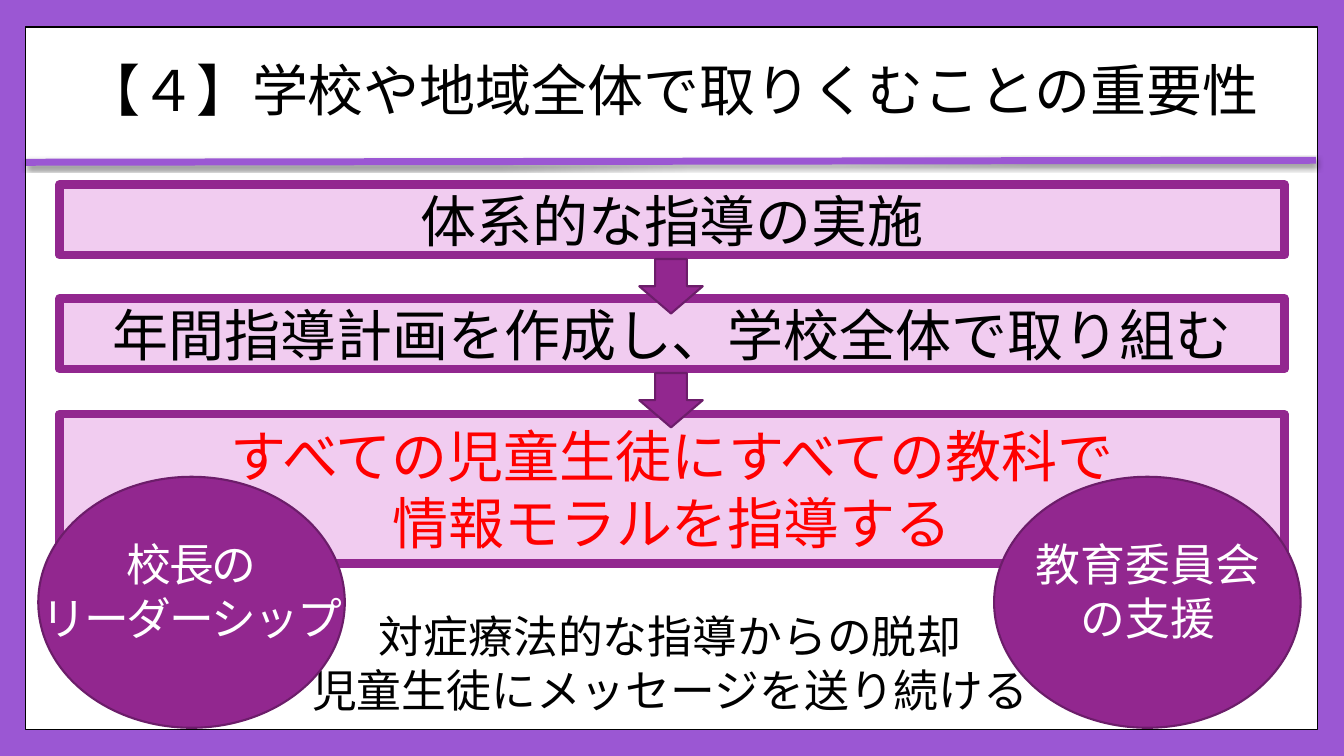
from lxml import etree
from pptx import Presentation
from pptx.dml.color import RGBColor
from pptx.enum.shapes import MSO_CONNECTOR, MSO_SHAPE
from pptx.enum.text import MSO_ANCHOR, PP_ALIGN
from pptx.oxml import parse_xml
from pptx.oxml.ns import nsdecls
from pptx.util import Inches, Pt

VIOLET = RGBColor(0x9B, 0x57, 0xD3)
PURPLE = RGBColor(0x92, 0x27, 0x8F)
DARK_PURPLE = RGBColor(0x6C, 0x1D, 0x6A)
PINK = RGBColor(0xF1, 0xCC, 0xF0)
RED = RGBColor(0xFF, 0x00, 0x00)
BLACK = RGBColor(0x00, 0x00, 0x00)
WHITE = RGBColor(0xFF, 0xFF, 0xFF)

prs = Presentation()
prs.slide_width, prs.slide_height = Inches(13.33), Inches(7.5)
s = prs.slides.add_slide(prs.slide_layouts[6])
s.background.fill.solid()
s.background.fill.fore_color.rgb = VIOLET


def add_box(kind, left, top, width, height, fill, line, weight):
    sp = s.shapes.add_shape(kind, Inches(left), Inches(top), Inches(width), Inches(height))
    sp.shadow.inherit = False
    sp.fill.solid()
    sp.fill.fore_color.rgb = fill
    sp.line.color.rgb = line
    sp.line.width = Pt(weight)
    return sp


def write_lines(sp, lines, size, color, font="Arial", wrap=True, spacing=None, tracking=None):
    """Write one centred paragraph per line; tracking is in hundredths of a point."""
    tf = sp.text_frame
    tf.word_wrap = wrap
    for i, line in enumerate(lines):
        p = tf.paragraphs[0] if i == 0 else tf.add_paragraph()
        p.alignment = PP_ALIGN.CENTER
        if spacing:
            p.line_spacing = spacing
        r = p.add_run()
        r.text = line
        r.font.name = font
        r.font.size = Pt(size)
        r.font.color.rgb = color
        if tracking:
            r.font._element.set("spc", str(tracking))
    return tf


# Frame, rule and title
add_box(MSO_SHAPE.RECTANGLE, 0.25, 0.27, 12.82, 6.97, WHITE, BLACK, 1)
rule = s.shapes.add_connector(
    MSO_CONNECTOR.STRAIGHT, Inches(0.26), Inches(1.61), Inches(13.05), Inches(1.59))
rule.line.color.rgb = VIOLET
rule.line.width = Pt(5)
rule._element.spPr.append(parse_xml(
    f'<a:effectLst {nsdecls("a")}>'
    f'<a:outerShdw blurRad="{Pt(3)}" dist="{Pt(2)}" dir="5400000" rotWithShape="0">'
    '<a:srgbClr val="000000"><a:alpha val="45000"/></a:srgbClr>'
    '</a:outerShdw></a:effectLst>'))

title = s.shapes.add_textbox(Inches(0.26), Inches(0.36), Inches(12.8), Inches(1.14))
tf = write_lines(title, ["【４】学校や地域全体で取りくむことの重要性"], 40, BLACK, "Karla", spacing=0.9)
tf.vertical_anchor = MSO_ANCHOR.MIDDLE

# Steps
steps = [
    (1.83, 0.7, BLACK, ["体系的な指導の実施"]),
    (2.96, 0.7, BLACK, ["年間指導計画を作成し、学校全体で取り組む"]),
    (4.11, 1.48, RED, ["すべての児童生徒にすべての教科で", "情報モラルを指導する"]),
]
for top, height, color, lines in steps:
    sp = add_box(MSO_SHAPE.RECTANGLE, 0.59, top, 12.15, height, PINK, PURPLE, 6)
    tf = write_lines(sp, lines, 40, color)
    tf.vertical_anchor = MSO_ANCHOR.MIDDLE

# Closing message
message = s.shapes.add_textbox(Inches(2.96), Inches(5.99), Inches(7.38), Inches(1.18))
write_lines(message, ["対症療法的な指導からの脱却", "児童生徒にメッセージを送り続ける"], 32, BLACK, wrap=False)

# Supporters
supporters = [
    (0.38, 0.3, 3.2, -150, ["校長の", "リーダーシップ"]),
    (9.86, 10.16, 2.45, None, ["教育委員会", "の支援"]),
]
for left, text_left, text_width, tracking, lines in supporters:
    add_box(MSO_SHAPE.OVAL, left, 4.73, 3.04, 2.49, PURPLE, DARK_PURPLE, 1.5)
    label = s.shapes.add_textbox(Inches(text_left), Inches(5.28), Inches(text_width), Inches(1.18))
    write_lines(label, lines, 32, WHITE, wrap=False, tracking=tracking)

# Arrows between the steps
for top in (2.57, 3.7):
    arrow = add_box(MSO_SHAPE.UP_ARROW, 6.34, top, 0.63, 0.54, PURPLE, DARK_PURPLE, 1.5)
    arrow.rotation = 180

prs.save("out.pptx")
